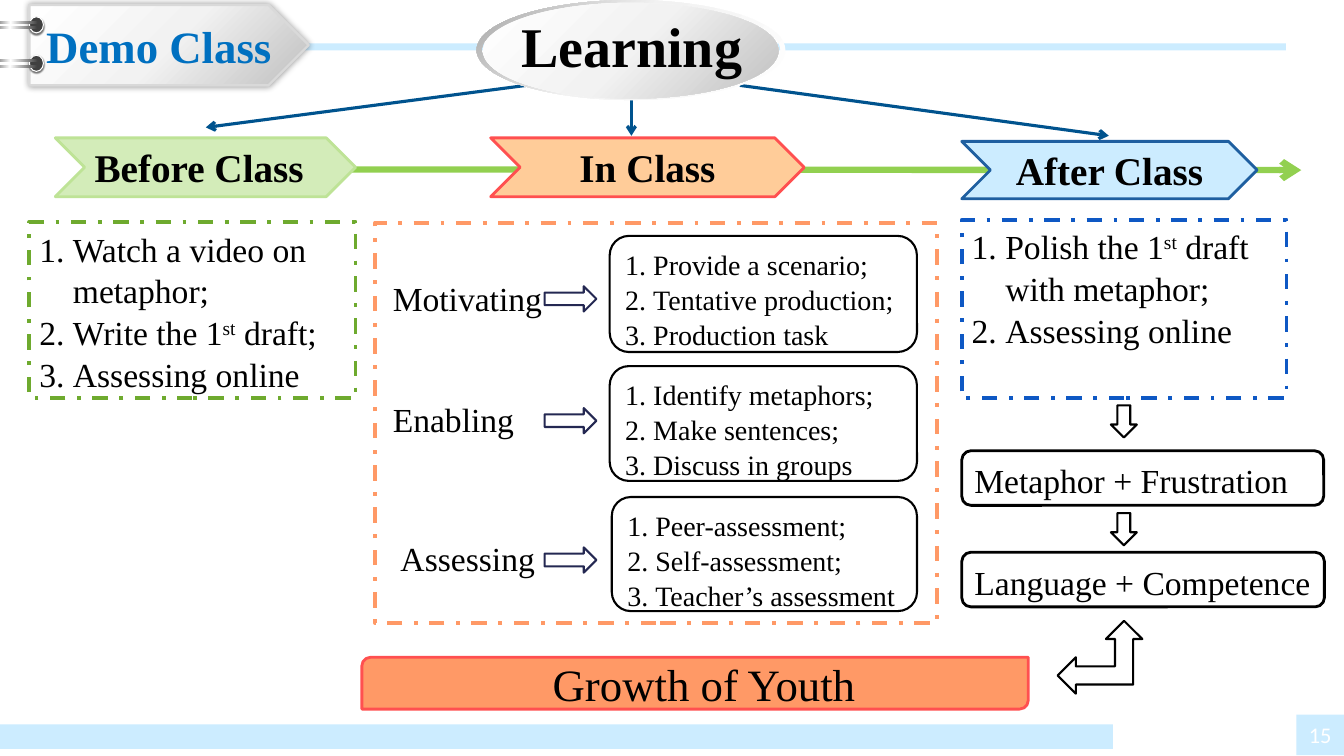
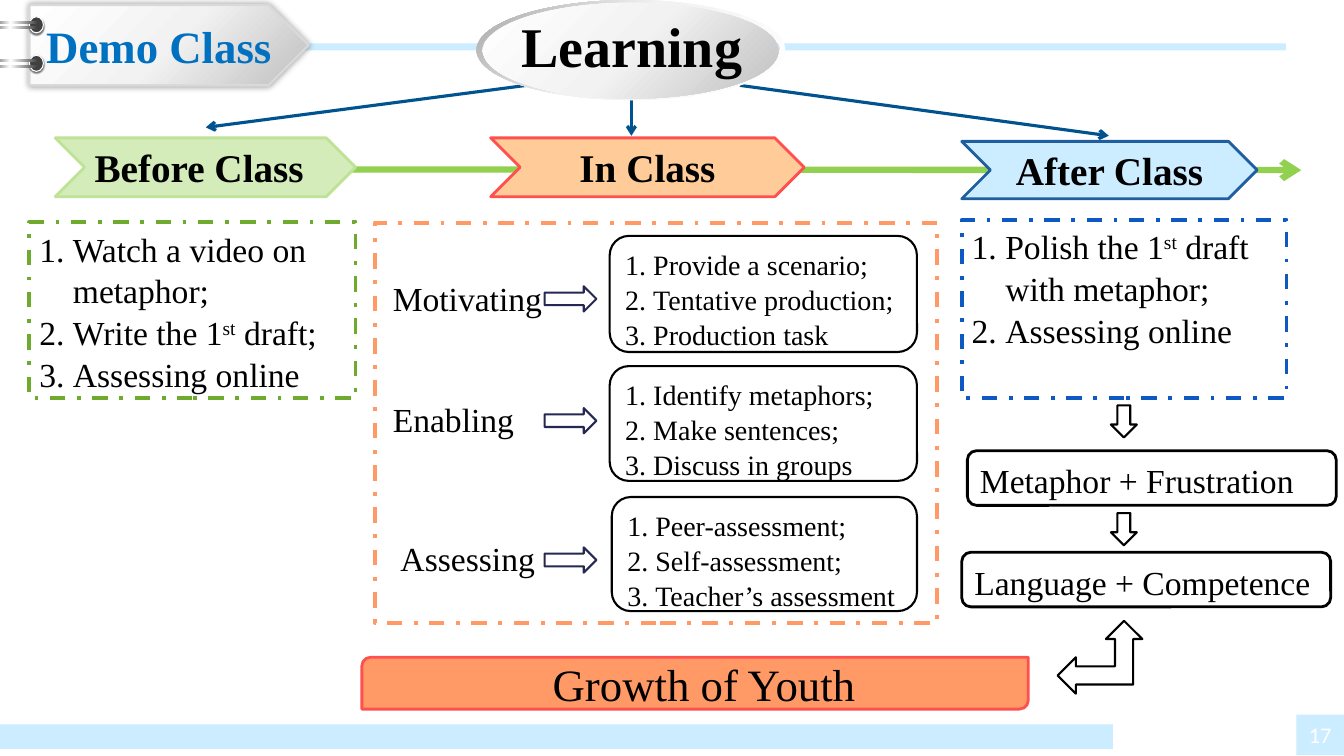
from lxml.etree import SubElement
from pptx import Presentation
from pptx.dml.color import RGBColor
from pptx.enum.dml import MSO_LINE
from pptx.enum.shapes import MSO_CONNECTOR, MSO_SHAPE
from pptx.enum.text import MSO_ANCHOR, PP_ALIGN
from pptx.oxml.ns import qn
from pptx.util import Pt

FONT = "Times New Roman"
BLACK, WHITE, PALE_BLUE, NAVY = "000000", "FFFFFF", "CCECFF", "242852"
ORANGE, RED = "FF9966", "FF5050"

TAG_GRADIENT = [(0, "FFFFFF"), (50, "F2F2F2"), (100, "BFBFBF")]
RIM_GRADIENT = [(0, "FFFFFF"), (55, "F2F2F2"), (100, "A6A6A6")]
ROD_GRADIENT = [(0, "404040"), (53, "FFFFFF"), (100, "262626")]

# Page number, then left edge and width of the two outcome boxes
PAGES = [
    ("15", {"Metaphor + Frustration": (687, 258.5), "Language + Competence": (687, 259)}),
    ("17", {"Metaphor + Frustration": (691, 263.5), "Language + Competence": (687, 263.5)}),
]
OUTCOME_TOPS = [322, 394.5]

# Start, end, colour, width
ARROWS = [
    ((528.5, 61), (792, 97), "00538E", 2.25),
    ((376, 61), (147, 91), "00538E", 2.25),
    ((451, 70.5), (451, 97), "00538E", 2.25),
    ((147, 121), (929.5, 121.5), "92D050", 4.5),
]

# Name, place, fill, line, alignment
PHASES = [
    ("Before Class", (39.5, 98.5, 214.5, 42), "D3ECB9", "BEE396", PP_ALIGN.LEFT),
    ("In Class", (350.5, 98.5, 224, 42), "FFCC99", RED, PP_ALIGN.CENTER),
    ("After Class", (687, 101, 211, 41), PALE_BLUE, "1F5FA0", PP_ALIGN.CENTER),
]

# Place, line colour, numbered items; ^ encloses a superscript
PANELS = [
    ((21, 158.5, 233, 126), "6EAA2E",
     ["Watch a video on metaphor;", "Write the 1^st^ draft;", "Assessing online"]),
    ((268, 159, 401.5, 286), ORANGE, []),
    ((687, 157, 232, 127.5), "0E58C4",
     ["Polish the 1^st^ draft with metaphor;", "Assessing online"]),
]

# Step, its left and top, arrow top, task box place, tasks
STEPS = [
    ("Motivating", (273.5, 193.5), 204.5, (435.5, 168.5, 219.5, 83),
     ["Provide a scenario;", "Tentative production;", "Production task"]),
    ("Enabling", (273.5, 280), 291.5, (435.5, 261.5, 219.5, 82),
     ["Identify metaphors;", "Make sentences;", "Discuss in groups"]),
    ("Assessing", (279, 379.5), 391, (437, 355, 218, 81.5),
     ["Peer-assessment;", "Self-assessment;", "Teacher’s assessment"]),
]

RING_TOPS = [12, 39.5]
DOWN_ARROW_TOPS = [289.5, 366.5]


def rgb(hex_color):
    return RGBColor.from_string(hex_color)


def set_gradient(fill, stops, angle):
    """Apply (percent, colour) stops; the angle runs counter-clockwise."""
    fill.gradient()
    fill.gradient_angle = angle
    stop_list = fill._xPr.find(".//" + qn("a:gsLst"))
    for old_stop in list(stop_list):
        stop_list.remove(old_stop)
    for percent, color in stops:
        stop = SubElement(stop_list, qn("a:gs"), pos=str(percent * 1000))
        SubElement(stop, qn("a:srgbClr"), val=color)


def set_shadow(shape, alpha, blur, distance, angle):
    effects = shape._element.spPr.find(qn("a:effectLst"))
    shadow = SubElement(effects, qn("a:outerShdw"), blurRad=str(Pt(blur)),
                        dist=str(Pt(distance)), dir=str(angle * 60000), rotWithShape="0")
    color = SubElement(shadow, qn("a:srgbClr"), val=BLACK)
    SubElement(color, qn("a:alpha"), val=str(alpha * 1000))


def add_box(page, kind, place, fill=None, line=None, width=1.5, gradient=None, angle=0):
    box = page.shapes.add_shape(kind, *map(Pt, place))
    if gradient:
        set_gradient(box.fill, gradient, angle)
    elif fill:
        box.fill.solid()
        box.fill.fore_color.rgb = rgb(fill)
    else:
        box.fill.background()
    if line:
        box.line.color.rgb = rgb(line)
        box.line.width = Pt(width)
    else:
        box.line.fill.background()
    box.shadow.inherit = False
    return box


def write(box, text, size, color=BLACK, bold=False, align=PP_ALIGN.LEFT,
          anchor=MSO_ANCHOR.TOP, numbered=False, spacing=None, font=FONT):
    """Fill a box with one paragraph, or one per list item; ^ encloses a superscript."""
    frame = box.text_frame
    frame.word_wrap = True
    frame.vertical_anchor = anchor
    for index, item in enumerate(text if isinstance(text, list) else [text]):
        para = frame.add_paragraph() if index else frame.paragraphs[0]
        para.alignment = align
        para.line_spacing = spacing
        if numbered:
            properties = para._p.get_or_add_pPr()
            properties.set("marL", str(Pt(size)))
            properties.set("indent", str(-Pt(size)))
            SubElement(properties, qn("a:buFont"), typeface=FONT)
            SubElement(properties, qn("a:buAutoNum"), type="arabicPeriod")
        for part, words in enumerate(item.split("^")):
            span = para.add_run()
            span.text = words
            span.font.size = Pt(size)
            span.font.bold = bold
            span.font.color.rgb = rgb(color)
            if font:
                span.font.name = font
            if part % 2:
                span.font._element.set("baseline", "30000")


def add_label(page, place, text, size, **style):
    label = page.shapes.add_textbox(*map(Pt, place))
    write(label, text, size, **style)


def add_arrow(page, start, end, color, width):
    arrow = page.shapes.add_connector(MSO_CONNECTOR.STRAIGHT, *map(Pt, start + end))
    arrow.line.color.rgb = rgb(color)
    arrow.line.width = Pt(width)
    SubElement(arrow.line._get_or_add_ln(), qn("a:tailEnd"), type="arrow")
    SubElement(arrow._element.spPr, qn("a:effectLst"))


def add_footer(page, number):
    add_box(page, MSO_SHAPE.RECTANGLE, (0, 517.5, 795, 17.5), PALE_BLUE)
    corner = add_box(page, MSO_SHAPE.RECTANGLE, (926, 510.5, 34, 29), PALE_BLUE)
    corner.text_frame.margin_left = corner.text_frame.margin_right = 0
    write(corner, number, 16, color=WHITE, align=PP_ALIGN.CENTER,
          anchor=MSO_ANCHOR.MIDDLE, font=None)


def add_header(page):
    add_box(page, MSO_SHAPE.RECTANGLE, (61, 31, 857.5, 5), PALE_BLUE)
    tag = add_box(page, MSO_SHAPE.PENTAGON, (21, 3.5, 199.5, 57.5), line="D9D9D9",
                  width=1.75, gradient=TAG_GRADIENT, angle=315)
    set_shadow(tag, 40, 5, 0, 0)
    write(tag, "Demo Class", 32, color="0070C0", bold=True,
          align=PP_ALIGN.CENTER, anchor=MSO_ANCHOR.MIDDLE)
    for top in RING_TOPS:
        hole = add_box(page, MSO_SHAPE.OVAL, (21, top, 10, 11.5), "404040", WHITE, 0.75)
        set_shadow(hole, 55, 1, 1, 90)
    for top in RING_TOPS:
        for left, drop in ((-9.5, 3), (-10, 6.75)):
            add_box(page, MSO_SHAPE.ROUNDED_RECTANGLE, (left, top + drop, 36.5, 2),
                    gradient=ROD_GRADIENT, angle=180)

    rim = add_box(page, MSO_SHAPE.DONUT, (340.5, 0, 220.5, 71.5),
                  gradient=RIM_GRADIENT, angle=135)
    rim.adjustments[0] = 0.05
    add_box(page, MSO_SHAPE.OVAL, (345, 2, 211, 68.5), gradient=TAG_GRADIENT, angle=315)
    add_label(page, (362, 5, 178.5, 55.5), "Learning", 40, bold=True, align=PP_ALIGN.CENTER)


def add_phases(page):
    for name, place, fill, line, align in PHASES:
        phase = add_box(page, MSO_SHAPE.CHEVRON, place, fill, line, 2)
        write(phase, name, 28, bold=True, align=align, anchor=MSO_ANCHOR.MIDDLE)
    for place, line, items in PANELS:
        panel = add_box(page, MSO_SHAPE.RECTANGLE, place, line=line, width=2.75)
        panel.line.dash_style = MSO_LINE.DASH_DOT
        if items:
            write(panel, items, 24, numbered=True, spacing=1.04)


def add_steps(page):
    for name, (left, top), arrow_top, place, tasks in STEPS:
        add_label(page, (left, top, 130, 37), name, 24, spacing=1.04)
        add_box(page, MSO_SHAPE.RIGHT_ARROW, (389, arrow_top, 37, 18), line=NAVY)
        task_box = add_box(page, MSO_SHAPE.ROUNDED_RECTANGLE, place, WHITE, BLACK)
        write(task_box, tasks, 20, numbered=True, spacing=1.04)


def add_outcomes(page, outcomes):
    for top, (text, (left, width)) in zip(OUTCOME_TOPS, outcomes.items()):
        outcome = add_box(page, MSO_SHAPE.ROUNDED_RECTANGLE, (left, top, width, 39),
                          line=BLACK, width=2)
        write(outcome, text, 24, spacing=1.04)
    for top in DOWN_ARROW_TOPS:
        add_box(page, MSO_SHAPE.DOWN_ARROW, (793.5, top, 18.5, 23), line=BLACK)
    add_box(page, MSO_SHAPE.LEFT_UP_ARROW, (755.5, 443.5, 60.5, 52), line=BLACK)
    goal = add_box(page, MSO_SHAPE.ROUND_2_DIAG_RECTANGLE, (258.5, 469.5, 476, 37),
                   ORANGE, RED, 2)
    goal.text_frame.margin_left = Pt(20)
    write(goal, "Growth of Youth", 32, align=PP_ALIGN.CENTER, anchor=MSO_ANCHOR.MIDDLE)


def main():
    deck = Presentation()
    deck.slide_width, deck.slide_height = Pt(960), Pt(540)
    for number, outcomes in PAGES:
        page = deck.slides.add_slide(deck.slide_layouts[6])
        add_footer(page, number)
        for arrow in ARROWS:
            add_arrow(page, *arrow)
        add_header(page)
        add_phases(page)
        add_steps(page)
        add_outcomes(page, outcomes)
    deck.save("out.pptx")


if __name__ == "__main__":
    main()
